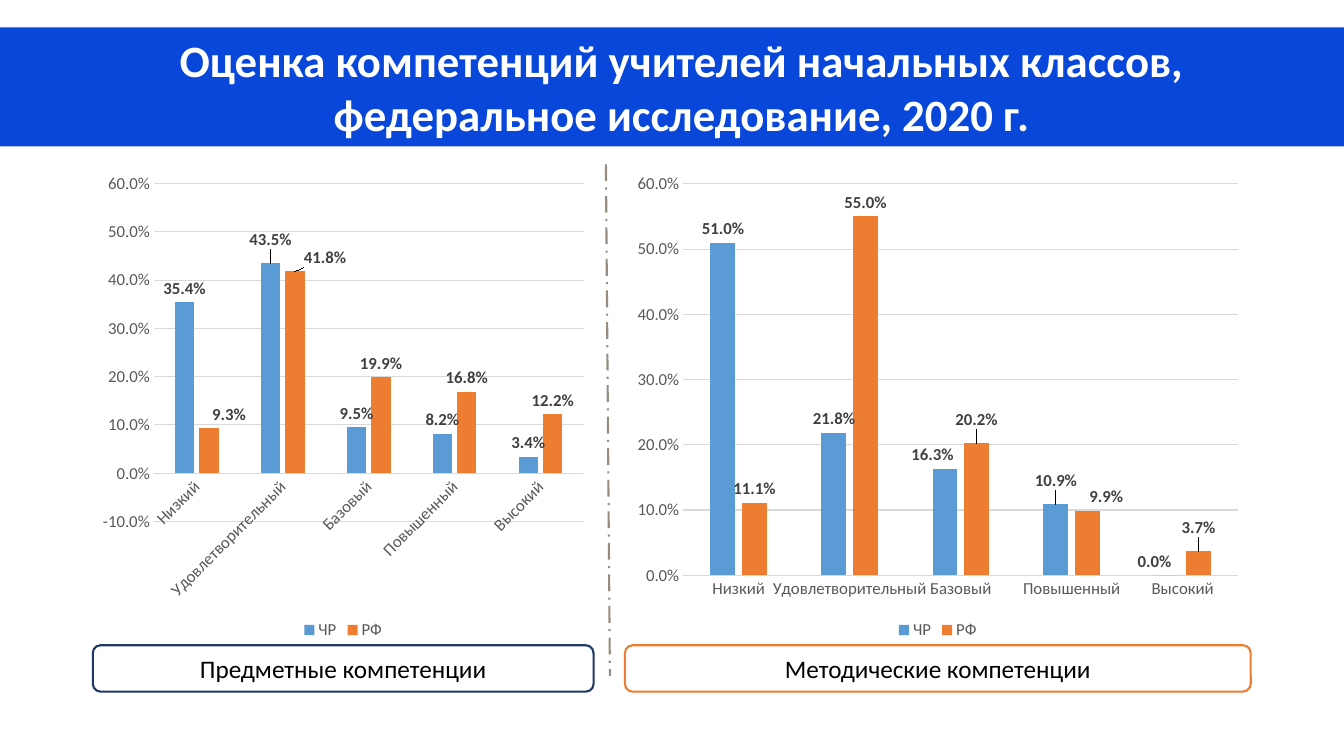
from lxml import etree
from pptx import Presentation
from pptx import util as u
from pptx.chart.data import CategoryChartData
from pptx.dml.color import RGBColor
from pptx.enum import chart as charts, dml, shapes, text
from pptx.oxml import parse_xml
from pptx.oxml.ns import nsdecls, qn

WHITE = RGBColor(0xFF, 0xFF, 0xFF)
BLACK = RGBColor(0x00, 0x00, 0x00)
BANNER = RGBColor(0x09, 0x47, 0xDA)
NAVY = RGBColor(0x20, 0x38, 0x64)
BLUE = RGBColor(0x5B, 0x9B, 0xD5)
ORANGE = RGBColor(0xED, 0x7D, 0x31)
TAUPE = RGBColor(0x97, 0x8C, 0x80)
GRID = RGBColor(0xD9, 0xD9, 0xD9)
AXIS_TEXT = RGBColor(0x59, 0x59, 0x59)
LABEL_TEXT = RGBColor(0x40, 0x40, 0x40)

LEVELS = ["Низкий", "Удовлетворительный", "Базовый", "Повышенный", "Высокий"]
REGIONS = [("ЧР", BLUE), ("РФ", ORANGE)]
PERCENT = "0.0%"
CHART_TOP, CHART_HEIGHT = 4.14, 12.09
CAPTION_TOP, CAPTION_HEIGHT = 16.26, 1.17

# Label shifts: (series, level) -> share of chart width and height
PANELS = [
    dict(caption="Предметные компетенции", left=2.34, width=12.62, outline=NAVY, minimum=-0.1,
         values=[(0.354, 0.435, 0.095, 0.082, 0.034), (0.093, 0.418, 0.199, 0.168, 0.122)],
         shifts={(0, 1): (0, -0.02), (1, 0): (0.04, 0), (1, 1): (0.06, 0)}),
    dict(caption="Методические компетенции", left=15.75, width=15.77, outline=ORANGE, minimum=0,
         values=[(0.51, 0.218, 0.163, 0.109, 0), (0.111, 0.55, 0.202, 0.099, 0.037)],
         shifts={(0, 2): (-0.02, 0), (0, 3): (0, -0.02), (0, 4): (-0.02, 0),
                 (1, 2): (0, -0.02), (1, 3): (0.03, 0), (1, 4): (0, -0.02)}),
]


class Slide:
    font_name = "Calibri"

    def __init__(self, deck):
        self.page = deck.slides.add_slide(deck.slide_layouts[5])

    def style(self, font, size, color, bold=False):
        font.name, font.size, font.bold = self.font_name, u.Pt(size), bold
        font.color.rgb = color

    def title(self, wording, left, top, width, height):
        box = self.page.shapes.title
        box.left, box.top, box.width, box.height = map(u.Cm, (left, top, width, height))
        box.fill.solid()
        box.fill.fore_color.rgb = BANNER
        frame = box.text_frame
        frame.text = wording
        frame.word_wrap = True
        frame.auto_size = text.MSO_AUTO_SIZE.SHAPE_TO_FIT_TEXT
        frame.vertical_anchor = text.MSO_ANCHOR.TOP
        for para in frame.paragraphs:
            properties = para._p.get_or_add_pPr()
            properties.set("marL", str(u.Cm(0.5)))
            properties.set("indent", "0")
            para.alignment = text.PP_ALIGN.CENTER
            para.line_spacing = 1.0
            para.space_before = u.Pt(0)
            self.style(para.font, 32, WHITE, True)

    def caption(self, wording, left, top, width, height, outline):
        box = self.page.shapes.add_shape(shapes.MSO_SHAPE.ROUNDED_RECTANGLE,
                                         *map(u.Cm, (left, top, width, height)))
        box.shadow.inherit = False
        box.fill.solid()
        box.fill.fore_color.rgb = WHITE
        box.line.color.rgb = outline
        box.line.width = u.Pt(1.5)
        box.text_frame.vertical_anchor = text.MSO_ANCHOR.MIDDLE
        para = box.text_frame.paragraphs[0]
        para.text = wording
        para.alignment = text.PP_ALIGN.CENTER
        self.style(para.font, 18, BLACK)

    def divider(self, x1, y1, x2, y2):
        line = self.page.shapes.add_connector(shapes.MSO_CONNECTOR.STRAIGHT,
                                              *map(u.Cm, (x1, y1, x2, y2)))
        line.line.color.rgb = TAUPE
        line.line.width = u.Pt(1.5)
        line.line.dash_style = dml.MSO_LINE.LONG_DASH_DOT
        etree.SubElement(line._element.spPr, qn("a:effectLst"))

    def columns(self, values, shifts, minimum, left, top, width, height):
        data = CategoryChartData(number_format=PERCENT)
        data.categories = LEVELS
        for (region, _), shares in zip(REGIONS, values):
            data.add_series(region, shares)
        chart = self.page.shapes.add_chart(charts.XL_CHART_TYPE.COLUMN_CLUSTERED,
                                           *map(u.Cm, (left, top, width, height)), data).chart
        self.style(chart.font, 10, BLACK)
        chart.has_title = False
        chart.has_legend = True
        chart.legend.position = charts.XL_LEGEND_POSITION.BOTTOM
        chart.legend.include_in_layout = False
        self.style(chart.legend.font, 12, AXIS_TEXT)
        self.axes(chart, minimum)

        plot = chart.plots[0]
        plot.vary_by_categories = False
        plot.gap_width, plot.overlap = 219, -27
        for series, (_, color) in zip(plot.series, REGIONS):
            series.invert_if_negative = False
            series.format.fill.solid()
            series.format.fill.fore_color.rgb = color
            labels = series.data_labels
            labels.show_value = True
            labels.number_format, labels.number_format_is_linked = PERCENT, False
            labels.position = charts.XL_LABEL_POSITION.OUTSIDE_END
            self.style(labels.font, 12, LABEL_TEXT, True)
        for (row, level), shift in shifts.items():
            self.shift_label(plot.series[row], level, *shift)

    def axes(self, chart, minimum):
        for axis in (chart.category_axis, chart.value_axis):
            axis.major_tick_mark = axis.minor_tick_mark = charts.XL_TICK_MARK.NONE
            self.style(axis.tick_labels.font, 12, AXIS_TEXT)
        levels, shares = chart.category_axis, chart.value_axis
        # Automatic rotation of the level names
        levels._element.find(qn("c:txPr")).find(qn("a:bodyPr")).set("rot", "-60000000")
        shares.minimum_scale, shares.maximum_scale, shares.major_unit = minimum, 0.6, 0.1
        shares.tick_labels.number_format = PERCENT
        shares.tick_labels.number_format_is_linked = False
        shares.format.line.fill.background()
        for line in (levels.format.line, shares.major_gridlines.format.line):
            line.color.rgb = GRID
            line.width = u.Pt(0.75)

    def shift_label(self, series, level, across, down):
        label = series.points[level].data_label
        label.position = charts.XL_LABEL_POSITION.OUTSIDE_END
        self.style(label.font, 12, LABEL_TEXT, True)
        layout = parse_xml(f'<c:layout {nsdecls("c")}><c:manualLayout><c:x val="{across}"/>'
                           f'<c:y val="{down}"/></c:manualLayout></c:layout>')
        for index in series._element.iterfind(f'{qn("c:dLbls")}/{qn("c:dLbl")}/{qn("c:idx")}'):
            if index.get("val") == str(level):
                index.addnext(layout)


def main():
    deck = Presentation()
    deck.slide_width, deck.slide_height = u.Cm(33.87), u.Cm(19.05)
    slide = Slide(deck)

    # Charts with their captions
    for panel in PANELS:
        left, width = panel["left"], panel["width"]
        slide.columns(panel["values"], panel["shifts"], panel["minimum"],
                      left, CHART_TOP, width, CHART_HEIGHT)
        slide.caption(panel["caption"], left, CAPTION_TOP, width, CAPTION_HEIGHT,
                      panel["outline"])

    # Banner and divider
    slide.title("Оценка компетенций учителей начальных классов,\n"
                "федеральное исследование, 2020 г.", 0, 0.69, 33.87, 3)
    slide.divider(15.27, CHART_TOP, 15.37, 17.04)
    deck.save("out.pptx")


if __name__ == "__main__":
    main()
